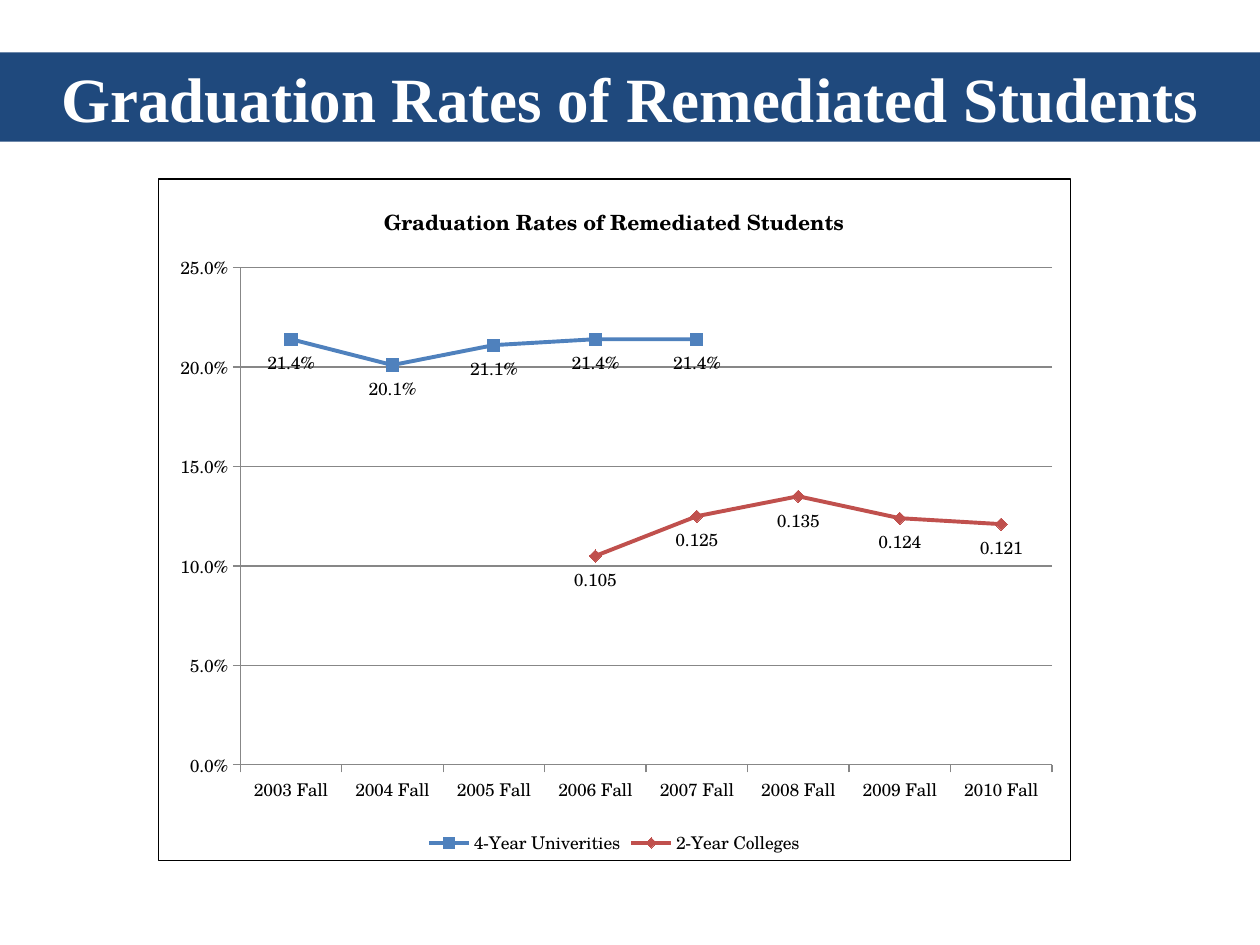
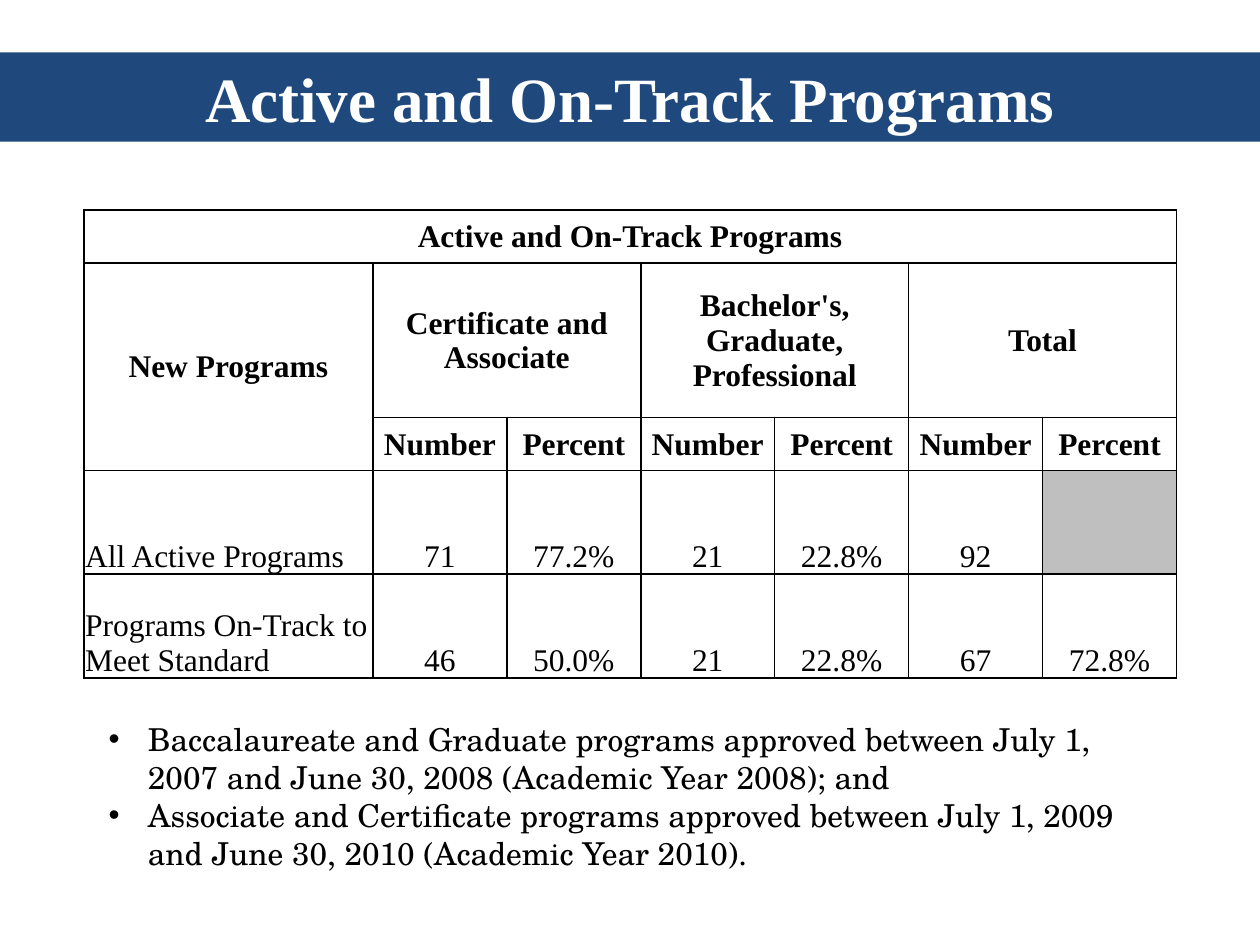
from dataclasses import dataclass
from typing import Any

import pptx
import pptx.chart.data
import pptx.dml.color
import pptx.enum.chart
import pptx.enum.shapes
import pptx.enum.text
import pptx.oxml
import pptx.oxml.ns
import pptx.util

Pt = pptx.util.Pt
RGB = pptx.dml.color.RGBColor.from_string
ALIGN = pptx.enum.text.PP_ALIGN
ANCHOR = pptx.enum.text.MSO_ANCHOR
MARKER = pptx.enum.chart.XL_MARKER_STYLE
NSDECLS = pptx.oxml.ns.nsdecls


@dataclass(frozen=True)
class Theme:
    band: str = "1F497D"
    white: str = "FFFFFF"
    black: str = "000000"
    grid: str = "878787"
    blocked: str = "BFBFBF"
    title_font: str = "Times New Roman"
    body_font: str = "TeX Gyre Schola"
    title_size: float = 36
    body_size: float = 18
    chart_title_size: float = 12
    chart_size: float = 10


@dataclass(frozen=True)
class Box:
    left: float
    top: float
    width: float
    height: float

    def emu(self) -> tuple:
        return Pt(self.left), Pt(self.top), Pt(self.width), Pt(self.height)


@dataclass(frozen=True)
class RateSeries:
    name: str
    values: tuple
    color: str
    marker: Any
    marker_size: int
    label_format: str


@dataclass(frozen=True)
class Cell:
    row: int
    col: int
    text: str
    rows: int = 1
    cols: int = 1


THEME = Theme()
SLIDE_W, SLIDE_H = 720, 540
BAND = Box(0, 30, SLIDE_W, 51)

# Content of the graduation chart
CHART_BOX = Box(90, 102, 522, 390)
PLOT_AREA = {"x": 0.09, "y": 0.13, "w": 0.89, "h": 0.73}
YEARS = [f"{year} Fall" for year in range(2003, 2011)]
RATES = (
    RateSeries("4-Year Univerities",
               (0.214, 0.201, 0.211, 0.214, 0.214, None, None, None),
               "4F81BD", MARKER.SQUARE, 7, "0.0%"),
    RateSeries("2-Year Colleges",
               (None, None, None, 0.105, 0.125, 0.135, 0.124, 0.121),
               "C0504D", MARKER.DIAMOND, 7, "General"),
)

# Content of the programs table
TABLE_BOX = Box(48, 120, 624.4, 267.4)
COL_WIDTHS = (165.1,) + (76.55,) * 6
ROW_HEIGHTS = (30.2, 88.4, 30.2, 59.3, 59.3)
HEADER_ROWS = 3
GROUPS = ("Certificate and Associate", "Bachelor's, Graduate, Professional", "Total")
PROGRAM_ROWS = (
    ("All Active Programs", "71", "77.2%", "21", "22.8%", "92", ""),
    ("Programs On-Track to Meet Standard", "46", "50.0%", "21", "22.8%", "67", "72.8%"),
)

NOTES_BOX = Box(55, 408, 618, 117)
NOTES_INDENT = 22.5
NOTES = (
    "Baccalaureate and Graduate programs approved between July 1, 2007 "
    "and June 30, 2008 (Academic Year 2008); and",
    "Associate and Certificate programs approved between July 1, 2009 "
    "and June 30, 2010 (Academic Year 2010).",
)


def apply(target: Any, values: dict) -> None:
    for name, value in values.items():
        setattr(target, name, value)


def style_font(font: Any, name: str, size: float, color: str, bold: bool = False) -> None:
    apply(font, {"name": name, "size": Pt(size), "bold": bold})
    font.color.rgb = RGB(color)


def style_line(line: Any, color: str, width: float) -> None:
    line.color.rgb = RGB(color)
    line.width = Pt(width)


def outline_xml(tag: str, color: str, width: float) -> Any:
    return pptx.oxml.parse_xml(
        f'<a:{tag} {NSDECLS("a")} w="{Pt(width)}"><a:solidFill>'
        f'<a:srgbClr val="{color}"/></a:solidFill></a:{tag}>')


# Shared title band
def add_titled_slide(prs: Any, title: str) -> Any:
    s = prs.slides.add_slide(prs.slide_layouts[6])
    sp = s.shapes.add_shape(pptx.enum.shapes.MSO_SHAPE.RECTANGLE, *BAND.emu())
    sp.shadow.inherit = False
    sp.fill.solid()
    sp.fill.fore_color.rgb = RGB(THEME.band)
    sp.line.fill.background()
    tf = sp.text_frame
    apply(tf, {"word_wrap": True, "vertical_anchor": ANCHOR.MIDDLE})
    p = tf.paragraphs[0]
    p.alignment = ALIGN.CENTER
    r = p.add_run()
    r.text = title
    style_font(r.font, THEME.title_font, THEME.title_size, THEME.white, True)
    return s


# Graduation chart
def frame_chart(chart: Any) -> None:
    """Give the chart its border and a fixed plot area."""
    border = pptx.oxml.parse_xml(f'<c:spPr {NSDECLS("c", "a")}><a:noFill/></c:spPr>')
    border.append(outline_xml("ln", THEME.black, 0.75))
    root = chart.element
    root.find(pptx.oxml.ns.qn("c:chart")).addnext(border)
    sizes = "".join(f'<c:{key} val="{val}"/>' for key, val in PLOT_AREA.items())
    layout = pptx.oxml.parse_xml(
        f'<c:layout {NSDECLS("c")}><c:manualLayout><c:layoutTarget val="inner"/>'
        f'<c:xMode val="edge"/><c:yMode val="edge"/>{sizes}</c:manualLayout></c:layout>')
    plot_area = root.find(".//" + pptx.oxml.ns.qn("c:plotArea"))
    for old in plot_area.findall(pptx.oxml.ns.qn("c:layout")):
        plot_area.remove(old)
    plot_area.insert(0, layout)


def style_series(series: Any, rate: RateSeries) -> None:
    series.smooth = False
    style_line(series.format.line, rate.color, 2.25)
    apply(series.marker, {"style": rate.marker, "size": rate.marker_size})
    series.marker.format.fill.solid()
    series.marker.format.fill.fore_color.rgb = RGB(rate.color)
    style_line(series.marker.format.line, rate.color, 0.75)
    labels = series.data_labels
    apply(labels, {"show_value": True, "number_format": rate.label_format,
                   "number_format_is_linked": False,
                   "position": pptx.enum.chart.XL_LABEL_POSITION.BELOW})
    style_font(labels.font, THEME.body_font, THEME.chart_size, THEME.black)


def add_rate_chart(s: Any, title: str) -> None:
    data = pptx.chart.data.CategoryChartData()
    data.categories = YEARS
    for rate in RATES:
        data.add_series(rate.name, rate.values)
    chart = s.shapes.add_chart(
        pptx.enum.chart.XL_CHART_TYPE.LINE_MARKERS, *CHART_BOX.emu(), data).chart
    style_font(chart.font, THEME.body_font, THEME.chart_size, THEME.black)

    chart.has_title = True
    chart.chart_title.include_in_layout = False
    r = chart.chart_title.text_frame.paragraphs[0].add_run()
    r.text = title
    style_font(r.font, THEME.body_font, THEME.chart_title_size, THEME.black, True)

    chart.has_legend = True
    apply(chart.legend, {"include_in_layout": False,
                         "position": pptx.enum.chart.XL_LEGEND_POSITION.BOTTOM})

    for axis in (chart.category_axis, chart.value_axis):
        apply(axis, {"major_tick_mark": pptx.enum.chart.XL_TICK_MARK.OUTSIDE,
                     "minor_tick_mark": pptx.enum.chart.XL_TICK_MARK.NONE})
        style_line(axis.format.line, THEME.grid, 0.75)
    value_axis = chart.value_axis
    apply(value_axis, {"minimum_scale": 0, "maximum_scale": 0.25, "major_unit": 0.05,
                       "has_major_gridlines": True})
    style_line(value_axis.major_gridlines.format.line, THEME.grid, 0.75)
    apply(value_axis.tick_labels, {"number_format": "0.0%", "number_format_is_linked": False})

    chart.plots[0].vary_by_categories = False
    for series, rate in zip(chart.plots[0].series, RATES):
        style_series(series, rate)
    frame_chart(chart)


# Programs table
def program_cells(title: str) -> list[Cell]:
    cells = [Cell(0, 0, title, cols=7), Cell(1, 0, "New Programs", rows=2)]
    for i, group in enumerate(GROUPS):
        col = 1 + 2 * i
        cells += [Cell(1, col, group, cols=2),
                  Cell(2, col, "Number"), Cell(2, col + 1, "Percent")]
    cells += [Cell(HEADER_ROWS + i, j, text)
              for i, row in enumerate(PROGRAM_ROWS) for j, text in enumerate(row)]
    return cells


def fill_cell(table: Any, item: Cell) -> None:
    tc = table.cell(item.row, item.col)
    if item.rows * item.cols > 1:
        tc.merge(table.cell(item.row + item.rows - 1, item.col + item.cols - 1))
    header = item.row < HEADER_ROWS
    tc.vertical_anchor = ANCHOR.MIDDLE if header else ANCHOR.BOTTOM
    if not item.text:
        tc.fill.solid()
        tc.fill.fore_color.rgb = RGB(THEME.blocked)
        return
    p = tc.text_frame.paragraphs[0]
    p.alignment = ALIGN.CENTER if header or item.col else ALIGN.LEFT
    r = p.add_run()
    r.text = item.text
    style_font(r.font, THEME.title_font, THEME.body_size, THEME.black, header)


def add_program_table(s: Any, title: str) -> None:
    table = s.shapes.add_table(
        len(ROW_HEIGHTS), len(COL_WIDTHS), *TABLE_BOX.emu()).table
    apply(table, {"first_row": False, "horz_banding": False})
    for column, width in zip(table.columns, COL_WIDTHS):
        column.width = Pt(width)
    for row, height in zip(table.rows, ROW_HEIGHTS):
        row.height = Pt(height)
    for tc in table.iter_cells():
        apply(tc, {"margin_left": Pt(0.72), "margin_right": Pt(0.72),
                   "margin_top": Pt(0.72), "margin_bottom": 0})
        tc.fill.background()
        props = tc._tc.get_or_add_tcPr()
        for i, side in enumerate(("lnL", "lnR", "lnT", "lnB")):
            props.insert(i, outline_xml(side, THEME.black, 1))
    for item in program_cells(title):
        fill_cell(table, item)


# Bulleted notes
def add_notes_list(s: Any) -> None:
    tf = s.shapes.add_textbox(*NOTES_BOX.emu()).text_frame
    tf.word_wrap = True
    for i, note in enumerate(NOTES):
        p = tf.add_paragraph() if i else tf.paragraphs[0]
        props = p._p.get_or_add_pPr()
        props.set("marL", str(Pt(NOTES_INDENT)))
        props.set("indent", str(-Pt(NOTES_INDENT)))
        for bullet in ('buFont {} typeface="Arial"', 'buChar {} char="•"'):
            props.append(pptx.oxml.parse_xml(f'<a:{bullet.format(NSDECLS("a"))}/>'))
        r = p.add_run()
        r.text = note
        style_font(r.font, THEME.body_font, THEME.body_size, THEME.black)


def main() -> None:
    prs = pptx.Presentation()
    apply(prs, {"slide_width": Pt(SLIDE_W), "slide_height": Pt(SLIDE_H)})

    rates_title = "Graduation Rates of Remediated Students"
    add_rate_chart(add_titled_slide(prs, rates_title), rates_title)

    programs_title = "Active and On-Track Programs"
    s = add_titled_slide(prs, programs_title)
    add_program_table(s, programs_title)
    add_notes_list(s)

    prs.save("out.pptx")


if __name__ == "__main__":
    main()
